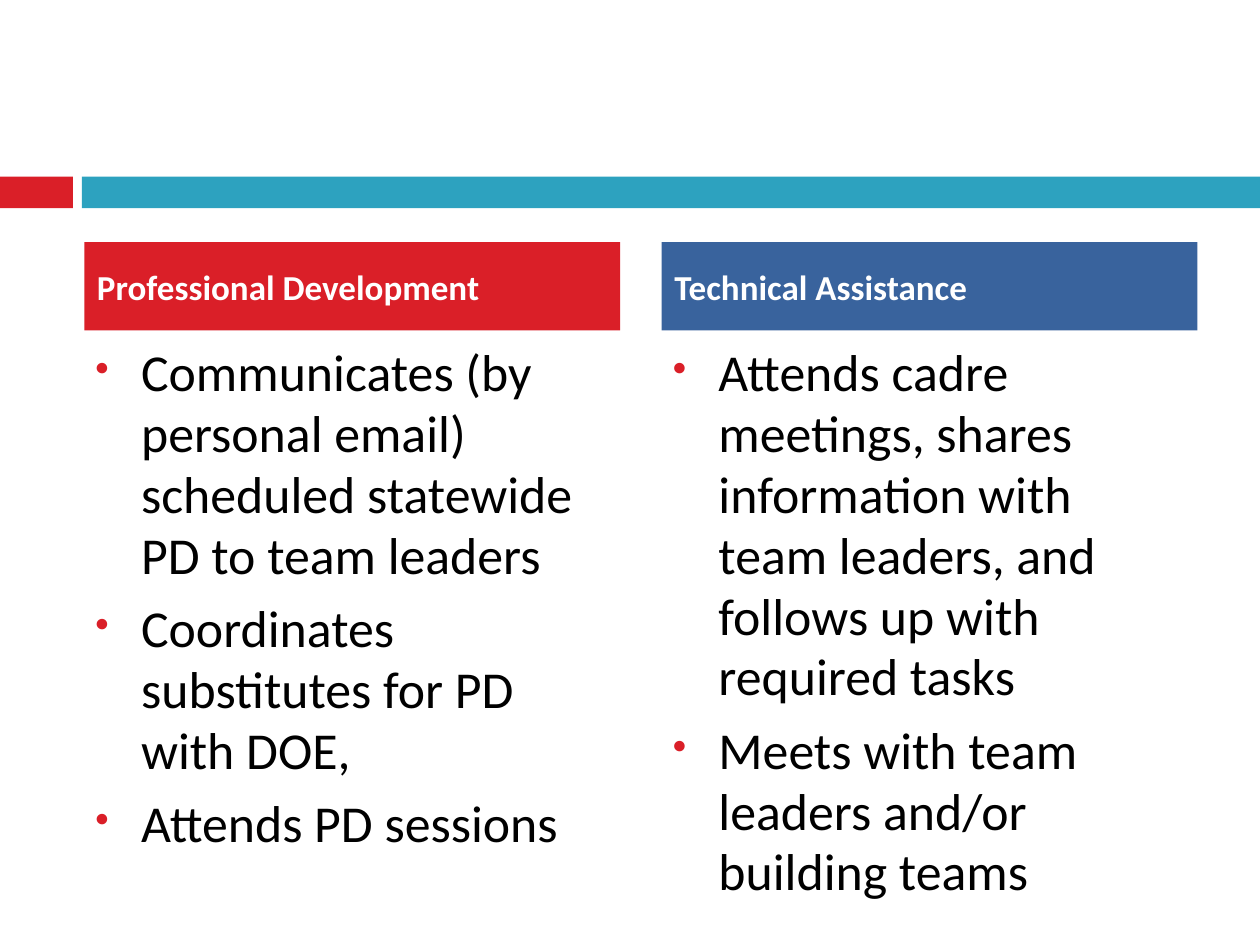
import pptx
import pptx.dml.color
import pptx.enum.shapes
import pptx.enum.text
import pptx.oxml
import pptx.oxml.ns
import pptx.util
from pptx.util import Cm

RED, TEAL, BLUE = "DA1F28", "2DA2BF", "39639D"
BLACK, WHITE = "000000", "FFFFFF"

HEAD = {"name": "Calibri", "size": pptx.util.Pt(20), "bold": True}
BODY = {"name": "Calibri", "size": pptx.util.Pt(29.6), "bold": False}
FRAME = {
    "word_wrap": True,
    "auto_size": pptx.enum.text.MSO_AUTO_SIZE.NONE,
}
BULLET = (
    f'<a:buClr {{ns}}><a:srgbClr val="{RED}"/></a:buClr>',
    '<a:buSzPct {ns} val="60000"/>',
    '<a:buFont {ns} typeface="Wingdings 2"/>',
    '<a:buChar {ns} char="◻"/>',
)

COLUMNS = (
    ("Professional Development", RED, (
        "Communicates (by personal email) scheduled statewide PD to team leaders",
        "Coordinates substitutes for PD with DOE,",
        "Attends PD sessions",
    )),
    ("Technical Assistance", BLUE, (
        "Attends cadre meetings, shares information with team leaders, "
        "and follows up with required tasks",
        "Meets with team leaders and/or building teams",
    )),
)


def paint(fill, tone):
    fill.solid()
    fill.fore_color.rgb = pptx.dml.color.RGBColor.from_string(tone)


def assign(item, values):
    for key, value in values.items():
        setattr(item, key, value)


class Page:
    """Holds the style and the current slide."""

    def __init__(self, slide):
        self.slide = slide
        self.holders = {p.placeholder_format.idx: p for p in slide.placeholders}

    def bar(self, left, width, tone):
        shape = self.slide.shapes.add_shape(
            pptx.enum.shapes.MSO_SHAPE.RECTANGLE,
            Cm(left), Cm(3.56), Cm(width), Cm(0.64))
        shape.shadow.inherit = False
        paint(shape.fill, tone)
        shape.line.fill.background()

    def place(self, index, left, top, height, anchor):
        holder = self.holders[index]
        assign(holder, {"left": Cm(left), "top": Cm(top),
                        "width": Cm(10.8), "height": Cm(height)})
        assign(holder.text_frame, {**FRAME, "vertical_anchor": anchor})
        return holder

    def label(self, para, text, style, tone):
        run = para.add_run()
        run.text = text
        assign(run.font, style)
        paint(run.font.fill, tone)

    def head(self, index, left, text, tone):
        holder = self.place(index, left, 4.88, 1.78,
                            pptx.enum.text.MSO_ANCHOR.MIDDLE)
        paint(holder.fill, tone)
        para = holder.text_frame.paragraphs[0]
        para.space_before = pptx.util.Pt(0)
        self.label(para, text, HEAD, WHITE)

    def points(self, index, left, items):
        frame = self.place(index, left, 6.78, 9.96,
                           pptx.enum.text.MSO_ANCHOR.TOP).text_frame
        for i, text in enumerate(items):
            para = frame.add_paragraph() if i else frame.paragraphs[0]
            self.mark(para)
            assign(para, {"space_before": pptx.util.Pt(7 if i else 0),
                          "line_spacing": 0.98})
            self.label(para, text, BODY, BLACK)

    def mark(self, para):
        """Give the paragraph a hanging indent and a square bullet."""
        props = para._p.get_or_add_pPr()
        props.set("marL", str(Cm(0.89)))
        props.set("indent", str(-Cm(0.89)))
        for tag in BULLET:
            props.append(pptx.oxml.parse_xml(
                tag.format(ns=pptx.oxml.ns.nsdecls("a"))))

    def drop(self, index):
        node = self.holders[index].element
        node.getparent().remove(node)


def main():
    deck = pptx.Presentation()
    assign(deck, {"slide_width": Cm(25.4), "slide_height": Cm(19.05)})
    page = Page(deck.slides.add_slide(
        deck.slide_layouts.get_by_name("Comparison")))
    page.drop(0)
    page.bar(0, 1.47, RED)
    page.bar(1.65, 23.75, TEAL)
    for i, (title, tone, items) in enumerate(COLUMNS):
        left = 1.7 + 11.64 * i
        page.head(1 + 2 * i, left, title, tone)
        page.points(2 + 2 * i, left, items)
    deck.save("out.pptx")


if __name__ == "__main__":
    main()
